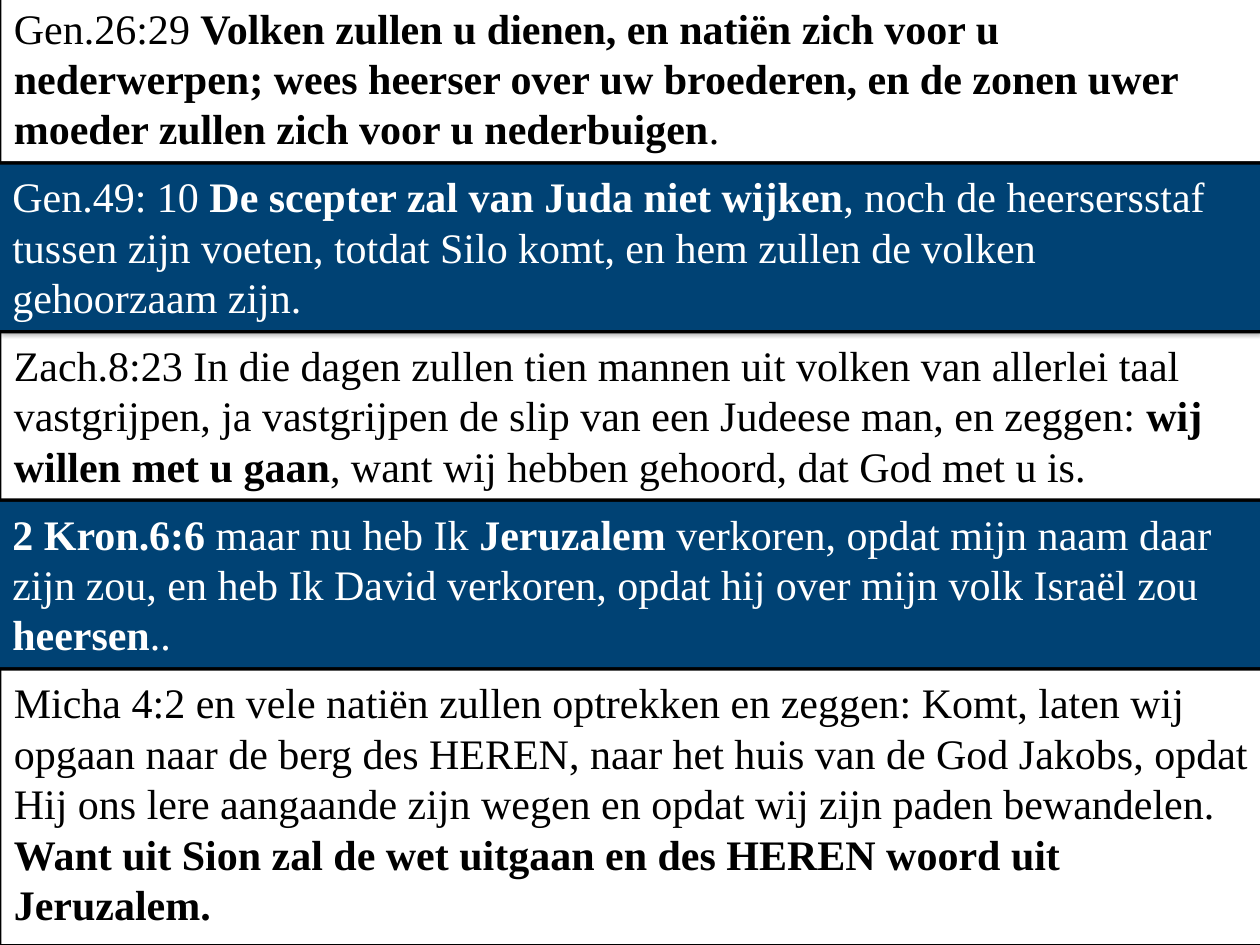
from dataclasses import dataclass

from lxml import etree
from pptx import Presentation
from pptx import util as u
from pptx.dml.color import RGBColor
from pptx.enum import shapes, text
from pptx.oxml import ns


@dataclass(frozen=True)
class Theme:
    font: str = "Times New Roman"
    size: int = 24
    black: str = "000000"
    white: str = "FFFFFF"
    blue: str = "004274"


class Deck:
    def __init__(self, theme):
        self.theme = theme
        self.prs = Presentation()
        self.prs.slide_width = u.Cm(25.4)
        self.prs.slide_height = u.Cm(19.05)
        self.slide = self.prs.slides.add_slide(self.prs.slide_layouts[6])

    def ground(self, color):
        fill = self.slide.background.fill
        fill.solid()
        fill.fore_color.rgb = RGBColor.from_string(color)

    def shade(self, shape):
        shape.shadow.inherit = False
        root = shape._element.spPr.find(ns.qn("a:effectLst"))
        outer = etree.SubElement(root, ns.qn("a:outerShdw"), blurRad="39370",
                                 dist="22860", dir="5400000", rotWithShape="0")
        tint = etree.SubElement(outer, ns.qn("a:srgbClr"), val=self.theme.black)
        etree.SubElement(tint, ns.qn("a:alpha"), val="35000")

    def band(self, left, top, height, fill, ink, runs):
        box = self.slide.shapes.add_shape(
            shapes.MSO_SHAPE.RECTANGLE,
            u.Cm(left), u.Cm(top), u.Cm(25.4), u.Cm(height))
        box.fill.solid()
        box.fill.fore_color.rgb = RGBColor.from_string(fill)
        box.line.fill.background()
        self.shade(box)
        frame = box.text_frame
        frame.word_wrap = True
        frame.auto_size = text.MSO_AUTO_SIZE.SHAPE_TO_FIT_TEXT
        frame.vertical_anchor = text.MSO_ANCHOR.TOP
        para = frame.paragraphs[0]
        para.alignment = text.PP_ALIGN.LEFT
        for words, bold in runs:
            run = para.add_run()
            run.text = words
            run.font.name = self.theme.font
            run.font.size = u.Pt(self.theme.size)
            run.font.bold = bold
            run.font.color.rgb = RGBColor.from_string(ink)


VERSES = {
    2: [("Zach.8:23 In die dagen zullen tien mannen uit volken van allerlei taal "
         "vastgrijpen, ja vastgrijpen de slip van een Judeese man, en zeggen: ", False),
        ("wij willen met u gaan", True),
        (", want wij hebben gehoord, dat God met u is.", False)],
    0: [("Gen.26:29 ", False),
        ("Volken zullen u dienen, en natiën zich voor u nederwerpen; wees heerser "
         "over uw broederen, en de zonen uwer moeder zullen zich voor u "
         "nederbuigen", True),
        (".", False)],
    1: [("Gen.49: 10 ", False),
        ("De scepter zal van Juda niet wijken", True),
        (", noch de heersersstaf tussen zijn voeten, totdat Silo komt, en hem "
         "zullen de volken gehoorzaam zijn.", False)],
    3: [("2 Kron.6:6 ", True),
        ("maar nu heb Ik ", False),
        ("Jeruzalem", True),
        (" verkoren, opdat mijn naam daar zijn zou, en heb Ik David verkoren, "
         "opdat hij over mijn volk Israël zou ", False),
        ("heersen", True),
        ("..", False)],
    4: [("Micha 4:2 en vele natiën zullen optrekken en zeggen: Komt, laten wij "
         "opgaan naar de berg des HEREN, naar het huis van de God Jakobs, opdat "
         "Hij ons lere aangaande zijn wegen en opdat wij zijn paden "
         "bewandelen. ", False),
        ("Want uit Sion zal de wet uitgaan en des HEREN woord "
         "uit Jeruzalem.", True)],
}


def main():
    theme = Theme()
    deck = Deck(theme)
    deck.ground(theme.black)
    first, pitch = -0.08, 3.4
    for row, runs in VERSES.items():
        dark = row % 2 == 1
        deck.band(left=0 if dark else 0.03,
                  top=first + row * pitch,
                  height=5.51 if row == 4 else 3.33,
                  fill=theme.blue if dark else theme.white,
                  ink=theme.white if dark else theme.black,
                  runs=runs)
    deck.prs.save("out.pptx")


if __name__ == "__main__":
    main()
